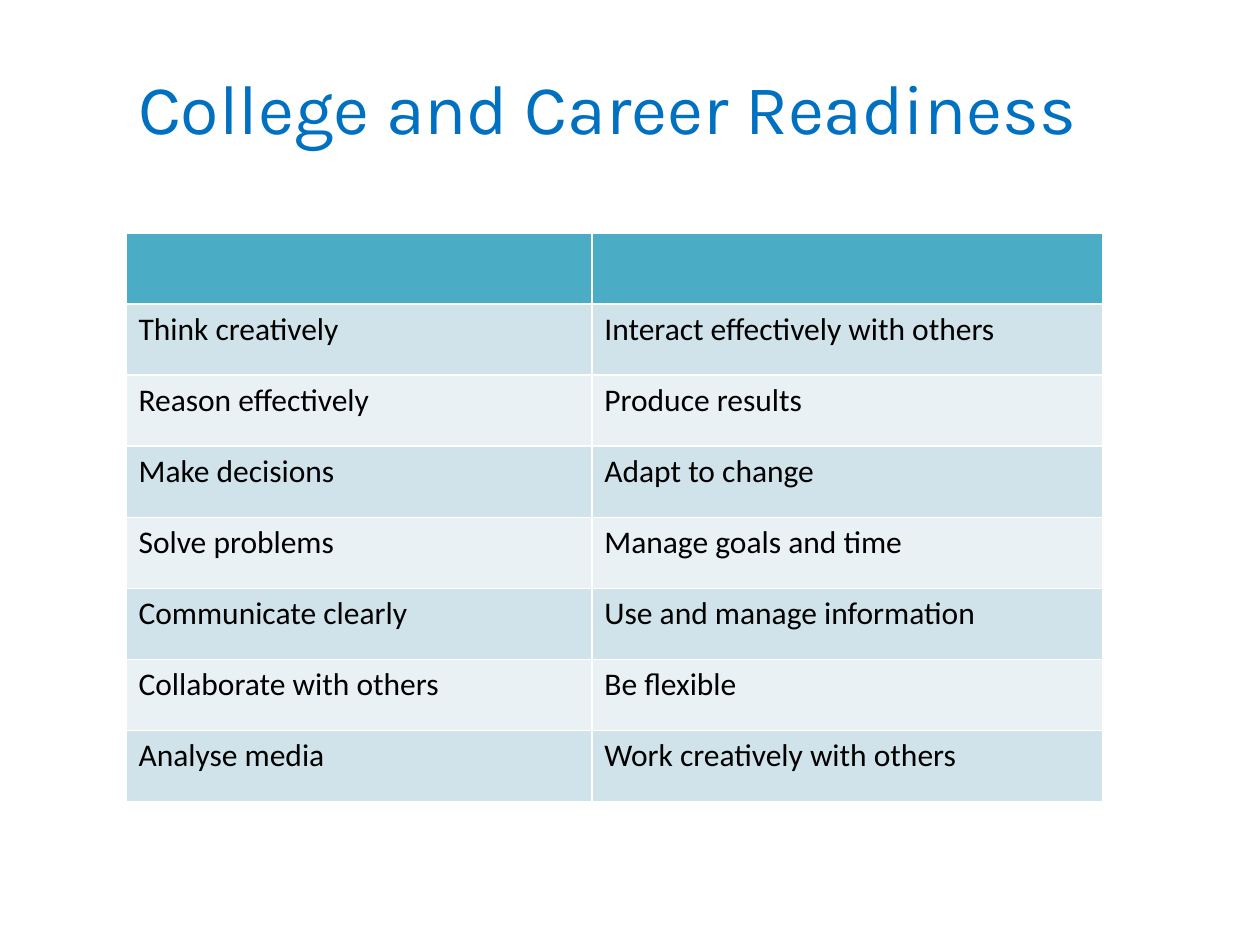
from lxml import etree
from pptx import Presentation
from pptx.dml.color import RGBColor
from pptx.enum.text import MSO_ANCHOR, PP_ALIGN
from pptx.oxml.ns import qn
from pptx.util import Pt

CENTER = PP_ALIGN.CENTER
MIDDLE = MSO_ANCHOR.MIDDLE

BLUE = "0070C0"
BLACK = "000000"
WHITE = "FFFFFF"
HEADER_FILL = "4BACC6"
BAND_FILLS = ("D0E3EA", "E9F1F5")

COLUMN_WIDTHS = (266.2, 292)
ROW_HEIGHT = 40.6
SKILLS = [
    ("Think creatively", "Interact effectively with others"),
    ("Reason effectively", "Produce results"),
    ("Make decisions", "Adapt to change"),
    ("Solve problems", "Manage goals and time"),
    ("Communicate clearly", "Use and manage information"),
    ("Collaborate with others", "Be flexible"),
    ("Analyse media", "Work creatively with others"),
]


def color(hex_string):
    return RGBColor.from_string(hex_string)


def add_run(paragraph, text, font_name, size, hex_string):
    run = paragraph.add_run()
    run.text = text
    run.font.name = font_name
    run.font.size = Pt(size)
    run.font.color.rgb = color(hex_string)


def add_title(slide, text):
    shape = slide.shapes.add_textbox(Pt(70.5), Pt(37.5), Pt(553), Pt(46.5))
    frame = shape.text_frame
    frame.word_wrap = True
    frame.vertical_anchor = MIDDLE
    frame.margin_left = frame.margin_right = 0
    paragraph = frame.paragraphs[0]
    paragraph.alignment = CENTER
    add_run(paragraph, text, "Karla", 40, BLUE)


def set_borders(cell, hex_string, width):
    properties = cell._tc.get_or_add_tcPr()
    for side in ("a:lnL", "a:lnR", "a:lnT", "a:lnB"):
        line = etree.SubElement(properties, qn(side), w=str(Pt(width)))
        fill = etree.SubElement(line, qn("a:solidFill"))
        etree.SubElement(fill, qn("a:srgbClr"), val=hex_string)


def style_cell(cell, hex_string):
    set_borders(cell, WHITE, 1)
    cell.fill.solid()
    cell.fill.fore_color.rgb = color(hex_string)


def add_skills_table(slide):
    row_count = len(SKILLS) + 1
    frame = slide.shapes.add_table(
        row_count, len(COLUMN_WIDTHS), Pt(72), Pt(133.2),
        Pt(sum(COLUMN_WIDTHS)), Pt(ROW_HEIGHT * row_count))
    table = frame.table
    for column, width in zip(table.columns, COLUMN_WIDTHS):
        column.width = Pt(width)
    for row in table.rows:
        row.height = Pt(ROW_HEIGHT)

    # Header row without wording
    for cell in table.rows[0].cells:
        style_cell(cell, HEADER_FILL)

    # Banded rows of skills
    for index, skills in enumerate(SKILLS):
        for cell, skill in zip(table.rows[index + 1].cells, skills):
            style_cell(cell, BAND_FILLS[index % 2])
            add_run(cell.text_frame.paragraphs[0], skill, "Calibri", 18, BLACK)


def main():
    presentation = Presentation()
    presentation.slide_width = Pt(720)
    presentation.slide_height = Pt(540)
    slide = presentation.slides.add_slide(presentation.slide_layouts[6])
    add_title(slide, "College and Career Readiness")
    add_skills_table(slide)
    presentation.save("out.pptx")


if __name__ == "__main__":
    main()
